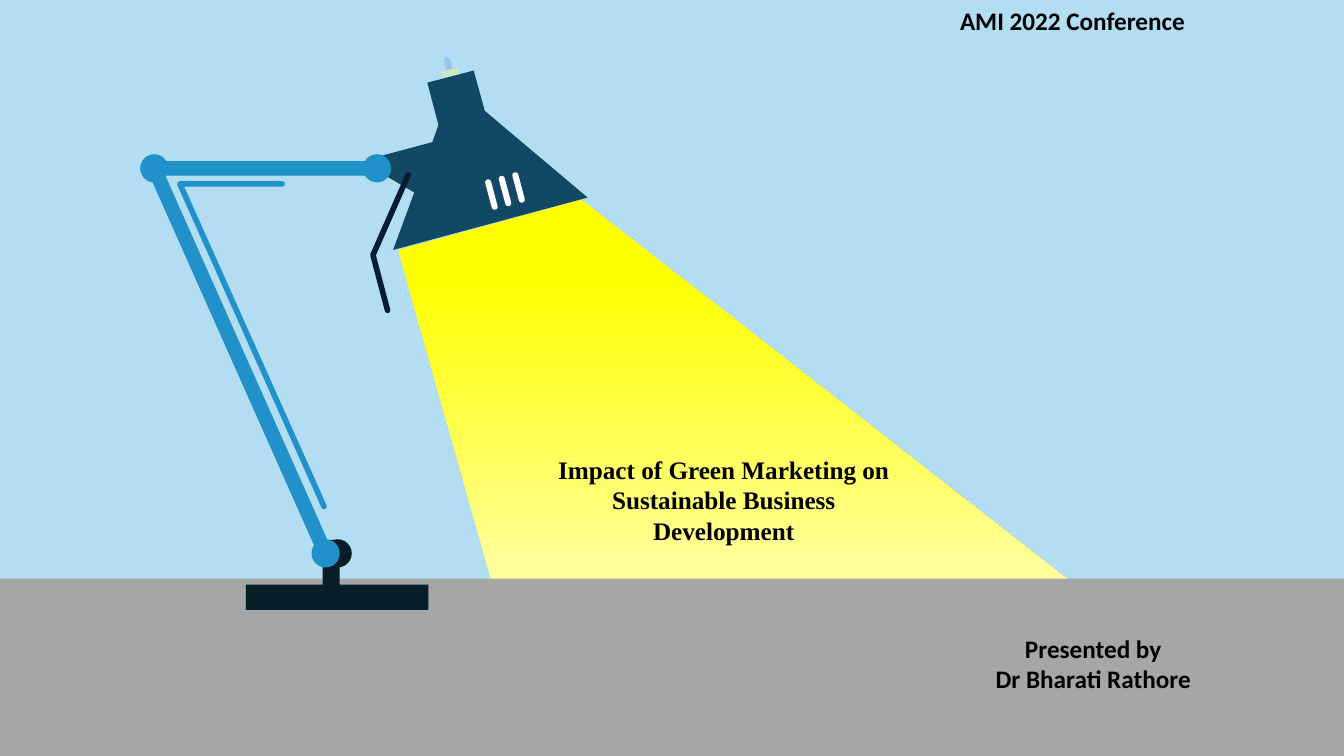
"""Title slide with a desk lamp lighting up the talk's subject."""
from dataclasses import dataclass
from typing import Union

from lxml import etree
from pptx import Presentation
from pptx import util as u
from pptx.dml import color
from pptx.enum import shapes, text
from pptx.oxml import ns

CELL = u.Inches(0.1)
COLS, ROWS = 133.33, 75
DESK_ROW = 57.4
TILT = -14.9
JOINT = 2.8
ELBOW, HEAD, FOOT = (15.3, 16.7), (37.4, 16.7), (32.3, 54.9)
OVAL = shapes.MSO_SHAPE.OVAL
RECT = shapes.MSO_SHAPE.RECTANGLE
PILL = shapes.MSO_SHAPE.ROUNDED_RECTANGLE

Point = tuple[float, float]


@dataclass(frozen=True)
class Theme:
    sky: str = "B3DDF2"
    desk: str = "A6A6A6"
    beam: str = "FFFF00"
    white: str = "FFFFFF"
    pin: str = "91C6F7"
    cap: str = "CBEAC0"
    shade: str = "114864"
    handle: str = "041C32"
    base: str = "071D28"
    arm: str = "2191C9"
    ink: str = "000000"
    size: int = 18
    thin: int = 4
    thick: float = 10.3
    sans: str = "Calibri"
    serif: str = "Times New Roman"


T = Theme()


@dataclass(frozen=True)
class Outline:
    points: tuple[Point, ...]
    fill: str
    fade_to: str = ""


@dataclass(frozen=True)
class Stroke:
    points: tuple[Point, ...]
    colour: str
    width: float


@dataclass(frozen=True)
class Part:
    kind: shapes.MSO_SHAPE
    centre: Point
    cols: float
    rows: float
    fill: str
    tilt: float = 0


Item = Union[Outline, Stroke, Part]


def grid(n: float) -> u.Emu:
    """Turn a count of grid cells into a length."""
    return u.Emu(round(n * CELL))


def rgb(value: str) -> color.RGBColor:
    """Turn a hex string into a colour."""
    return color.RGBColor.from_string(value)


def paint(s, fill: str) -> None:
    """Give a shape a plain fill without line or shadow."""
    s.shadow.inherit = False
    s.fill.solid()
    s.fill.fore_color.rgb = rgb(fill)
    s.line.fill.background()


def freeform(slide, points: tuple[Point, ...], close: bool):
    """Build a straight-edged path through grid points."""
    first, *rest = [(grid(x), grid(y)) for x, y in points]
    builder = slide.shapes.build_freeform(*first, scale=1.0)
    builder.add_line_segments(rest, close=close)
    return builder.convert_to_shape()


def draw_outline(slide, item: Outline) -> None:
    """Draw a closed shape, fading downwards if asked."""
    s = freeform(slide, item.points, True)
    paint(s, item.fill)
    if item.fade_to:
        s.fill.gradient()
        s.fill.gradient_angle = 270
        stops = ((0.14, item.fill), (1, item.fade_to))
        for stop, (position, value) in zip(s.fill.gradient_stops, stops):
            stop.position = position
            stop.color.rgb = rgb(value)


def draw_stroke(slide, item: Stroke) -> None:
    """Draw an open path with round ends and corners."""
    s = freeform(slide, item.points, False)
    s.shadow.inherit = False
    s.fill.background()
    s.line.color.rgb = rgb(item.colour)
    s.line.width = u.Pt(item.width)
    ln = s.line._get_or_add_ln()
    ln.set("cap", "rnd")
    etree.SubElement(ln, ns.qn("a:round"))


def draw_part(slide, item: Part) -> None:
    """Draw a preset shape around its centre."""
    x, y = item.centre
    s = slide.shapes.add_shape(
        item.kind, grid(x - item.cols / 2), grid(y - item.rows / 2),
        grid(item.cols), grid(item.rows))
    paint(s, item.fill)
    s.rotation = item.tilt
    if item.kind == PILL:
        s.adjustments[0] = 0.5


def write(slide, content: str, *, left: float, top: float, cols: float,
          rows: float, font: str) -> None:
    """Write centred bold text, one paragraph per line."""
    tf = slide.shapes.add_textbox(
        grid(left), grid(top), grid(cols), grid(rows)).text_frame
    tf.word_wrap = True
    tf.auto_size = text.MSO_AUTO_SIZE.SHAPE_TO_FIT_TEXT
    for i, line in enumerate(content.split("\n")):
        p = tf.add_paragraph() if i else tf.paragraphs[0]
        p.alignment = text.PP_ALIGN.CENTER
        r = p.add_run()
        r.text = line
        r.font.name = font
        r.font.size = u.Pt(T.size)
        r.font.bold = True
        r.font.color.rgb = rgb(T.ink)


def lamp_scene() -> list[Item]:
    """List the drawing from back to front."""
    beam = ((39.5, 24.8), (53.7, 75), (128.3, 75), (57.7, 19.8))
    cap = ((43.8, 7.1), (45.4, 6.7), (45.6, 7.4), (44, 7.9))
    shade = ((58.3, 19.6), (48.1, 11), (47, 7), (42.4, 8.2), (43.5, 12.4),
             (42.9, 14.1), (37.3, 15.6), (37.7, 17.1), (41.1, 19.1),
             (39, 24.8))
    slats = [Part(PILL, (51.45 - 1.35 * i, 18.6 + 0.35 * i), 0.6, 3.1,
                  T.white, TILT) for i in range(3)]
    joints = [Part(OVAL, centre, JOINT, JOINT, T.arm)
              for centre in (FOOT, HEAD, ELBOW)]
    return [
        Outline(beam, T.beam, T.white),
        Part(PILL, (44.5, 6.55), 0.6, 1.8, T.pin, TILT),
        Outline(cap, T.cap),
        Outline(shade, T.shade),
        *slats,
        Stroke(((40.5, 17.35), (37, 25.3), (38.45, 30.8)), T.handle, T.thin),
        Part(RECT, (COLS / 2, (DESK_ROW + ROWS) / 2), COLS, ROWS - DESK_ROW,
             T.desk),
        Part(OVAL, (33.5, FOOT[1]), JOINT, JOINT, T.base),
        Part(RECT, (32.85, 56), 1.7, 4.9, T.base),
        Part(RECT, (33.45, 59.25), 18.1, 2.5, T.base),
        Stroke(((28, 18.25), (17.85, 18.25), (32.15, 50.25)), T.arm, T.thin),
        Stroke((HEAD, ELBOW, FOOT), T.arm, T.thick),
        *joints,
    ]


def main() -> None:
    """Build and save the slide."""
    prs = Presentation()
    prs.slide_width, prs.slide_height = grid(COLS), grid(ROWS)
    slide = prs.slides.add_slide(prs.slide_layouts[6])
    slide.background.fill.solid()
    slide.background.fill.fore_color.rgb = rgb(T.sky)
    draw = {Outline: draw_outline, Stroke: draw_stroke, Part: draw_part}
    for item in lamp_scene():
        draw[type(item)](slide, item)
    write(slide, "Impact of Green Marketing on Sustainable Business Development",
          left=54, top=44.6, cols=35.6, rows=10.1, font=T.serif)
    write(slide, "Presented by\nDr Bharati Rathore",
          left=85.9, top=62.3, cols=45.1, rows=7.1, font=T.sans)
    write(slide, "AMI 2022 Conference",
          left=79.5, top=0, cols=53.8, rows=4, font=T.sans)
    prs.save("out.pptx")


if __name__ == "__main__":
    main()
